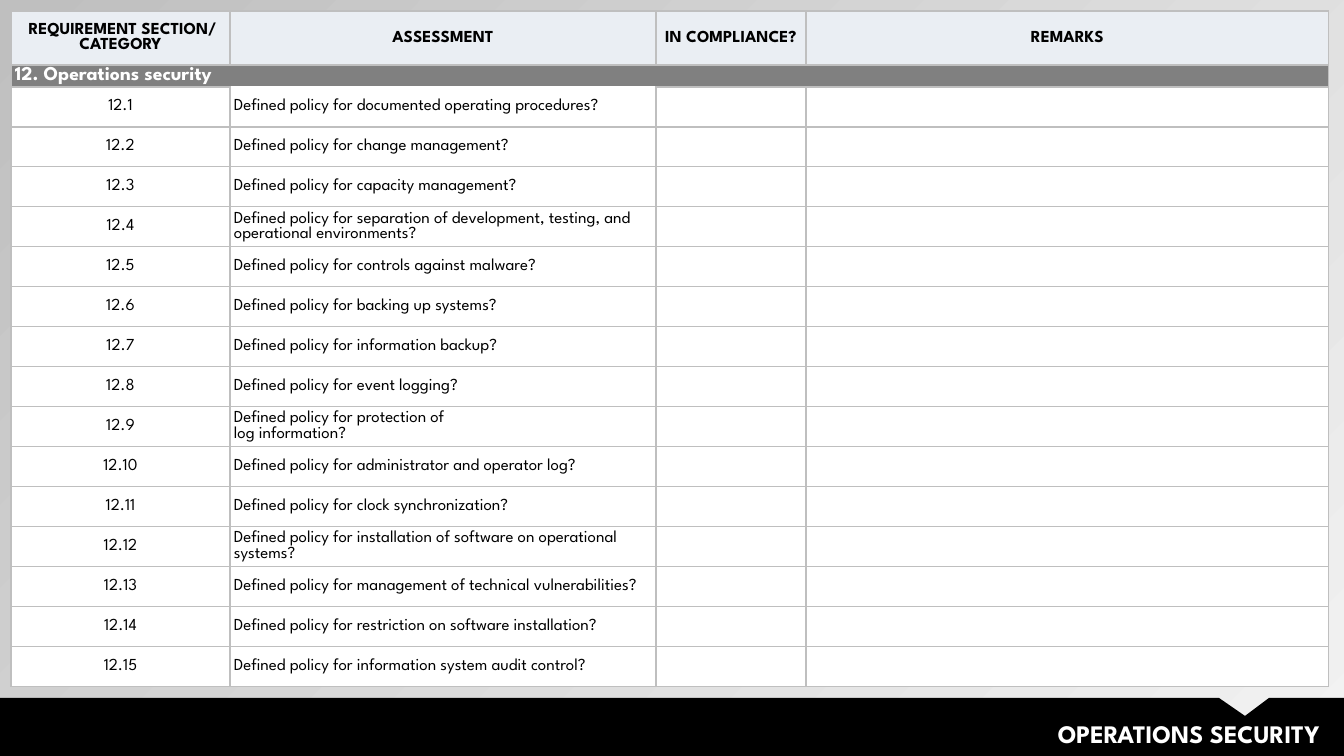
from pptx import Presentation
from pptx import util as u
from pptx.dml.color import RGBColor
from pptx.enum import text
from pptx.oxml.ns import qn
from lxml import etree

PX = 914400 / 100.8
FONT = "League Spartan"
HEX = {"black": "000000", "white": "FFFFFF", "head": "EAEEF3", "band": "808080",
       "line": "BFBFBF", "light": "F2F2F2"}
LEFT, MID, RIGHT = text.PP_ALIGN.LEFT, text.PP_ALIGN.CENTER, text.PP_ALIGN.RIGHT


def px(n):
    return u.Emu(round(n * PX))


def write(frame, words, size=12, bold=False, color="black", align=LEFT):
    for i, line in enumerate(words.split("\n")):
        para = frame.paragraphs[0] if i == 0 else frame.add_paragraph()
        para.alignment = align
        run = para.add_run()
        run.text = line
        # The paragraph font keeps empty cells as small as filled ones
        for font in (para.font, run.font):
            font.name, font.size, font.bold = FONT, u.Pt(size), bold
            font.color.rgb = RGBColor.from_string(HEX[color])


prs = Presentation()
prs.slide_width, prs.slide_height = px(1344), px(756)
slide = prs.slides.add_slide(prs.slide_layouts[5])

# Background: light at the lower right, grey at the upper left
back = slide.background.fill
back.gradient()
back.gradient_angle = 135
for stop, tone in zip(back.gradient_stops, ("light", "line")):
    stop.color.rgb = RGBColor.from_string(HEX[tone])
glow = slide.element.find(".//" + qn("a:gs"))[0]
etree.SubElement(glow, qn("a:alpha"), val="40000")

# Black footer with a notch
draw = slide.shapes.build_freeform(0, 698, scale=PX)
draw.add_line_segments([(1219, 698), (1245, 716), (1269, 698), (1344, 698),
                        (1344, 756), (0, 756)], close=True)
foot = draw.convert_to_shape()
foot.shadow.inherit = False
foot.fill.solid()
foot.fill.fore_color.rgb = RGBColor.from_string(HEX["black"])
foot.line.fill.background()

# Title, in front of the footer
title = slide.shapes.title
title.left, title.top, title.width, title.height = px(417), px(714), px(913), px(40)
frame = title.text_frame
frame.word_wrap = True
frame.auto_size = text.MSO_AUTO_SIZE.NONE
frame.vertical_anchor = text.MSO_ANCHOR.BOTTOM
write(frame, "OPERATIONS SECURITY", size=18, bold=True, color="white", align=RIGHT)
foot.element.addnext(title.element)

# Checklist contents
heads = [" REQUIREMENT SECTION/\nCATEGORY", "ASSESSMENT", "IN COMPLIANCE?", "REMARKS"]
topics = [
    "documented operating procedures",
    "change management",
    "capacity management",
    "separation of development, testing, and operational environments",
    "controls against malware",
    "backing up systems",
    "information backup",
    "event logging",
    "protection of\nlog information",
    "administrator and operator log",
    "clock synchronization",
    "installation of software on operational systems",
    "management of technical vulnerabilities",
    "restriction on software installation",
    "information system audit control",
]
rows = [heads, ["12. Operations security", "", "", ""]]
for i, topic in enumerate(topics, 1):
    rows.append([f"12.{i}", f"Defined policy for {topic}?", "", ""])

# Checklist table
wide = [219, 426, 150, 523]
high = [54, 22] + [40] * len(topics)
grid = slide.shapes.add_table(len(rows), len(wide), px(11), px(11),
                              px(sum(wide)), px(sum(high))).table
grid.horz_banding = False
for col, w in zip(grid.columns, wide):
    col.width = px(w)
for row, h in zip(grid.rows, high):
    row.height = px(h)
for r, row in enumerate(rows):
    tone = {0: "head", 1: "band"}.get(r, "white")
    for c, words in enumerate(row):
        cell = grid.cell(r, c)
        cell.margin_left = cell.margin_right = px(4)
        cell.margin_top = cell.margin_bottom = 0
        cell.vertical_anchor = text.MSO_ANCHOR.MIDDLE
        cell.fill.solid()
        cell.fill.fore_color.rgb = RGBColor.from_string(HEX[tone])
        write(cell.text_frame, words, size=14 if r == 1 else 12, bold=r < 2,
              color="white" if r == 1 else "black",
              align=MID if r == 0 or (r > 1 and c == 0) else LEFT)
        # Borders: grey, but white above the first assessment
        props = cell._tc.get_or_add_tcPr()
        for i, side in enumerate(("lnL", "lnR", "lnT", "lnB")):
            edge = "white" if (r, c, side) == (2, 1, "lnT") else "line"
            line = etree.Element(qn("a:" + side), w="12700")
            fill = etree.SubElement(line, qn("a:solidFill"))
            etree.SubElement(fill, qn("a:srgbClr"), val=HEX[edge])
            props.insert(i, line)
grid.cell(1, 0).merge(grid.cell(1, 3))

prs.save("out.pptx")
